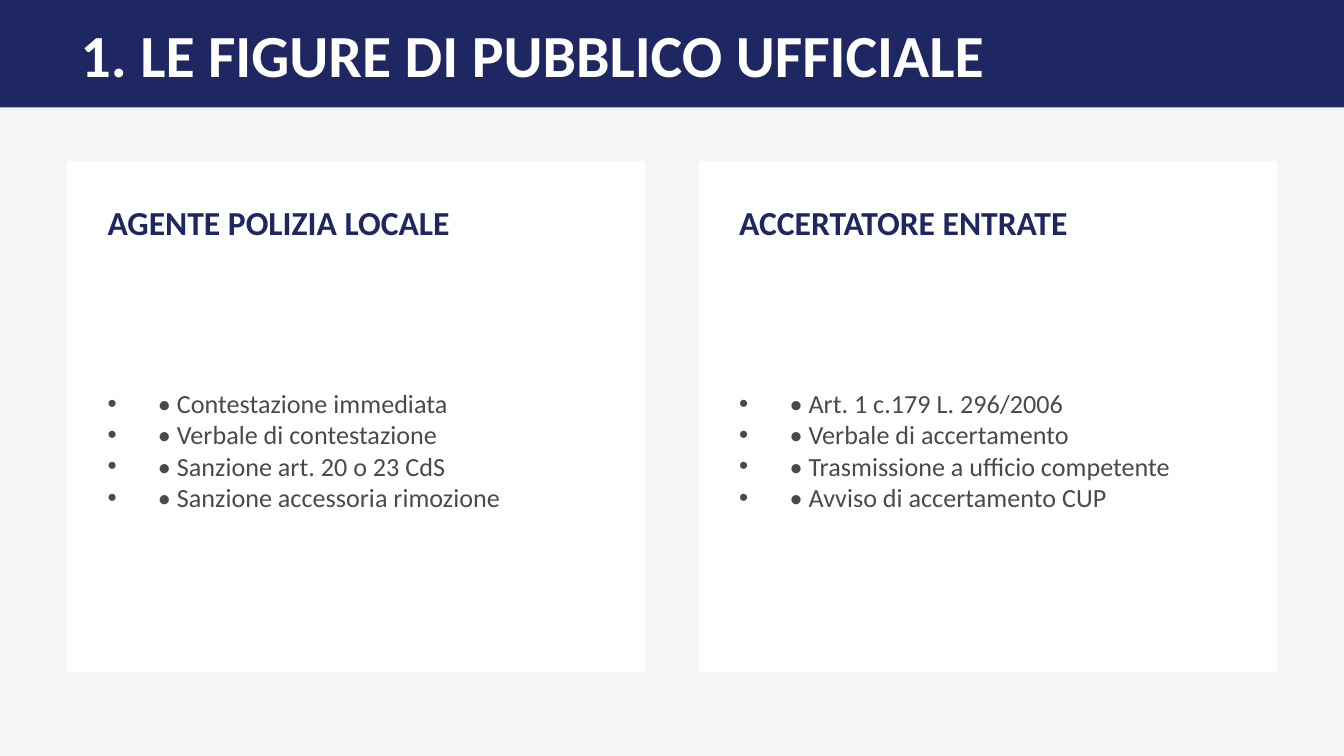
import pptx
import pptx.util
import pptx.dml.color
import pptx.enum.shapes
import pptx.enum.text
import pptx.oxml
import pptx.oxml.ns
from pptx.util import Inches

NAVY = pptx.dml.color.RGBColor(0x1E, 0x27, 0x61)
WHITE = pptx.dml.color.RGBColor(0xFF, 0xFF, 0xFF)
PALE = pptx.dml.color.RGBColor(0xF5, 0xF5, 0xF5)
GRAY = pptx.dml.color.RGBColor(0x4A, 0x4A, 0x4A)

TITLE_FORMAT = {"size": pptx.util.Pt(32), "bold": True, "name": "Calibri"}
HEADING_FORMAT = {"size": pptx.util.Pt(18), "bold": True, "name": "Calibri"}
LIST_FORMAT = {"size": pptx.util.Pt(14), "bold": False, "name": "Calibri"}
LIST_INDENT = Inches(3 / 8)

COLUMNS = [
    ("AGENTE POLIZIA LOCALE", [
        "• Contestazione immediata",
        "• Verbale di contestazione",
        "• Sanzione art. 20 o 23 CdS",
        "• Sanzione accessoria rimozione",
    ]),
    ("ACCERTATORE ENTRATE", [
        "• Art. 1 c.179 L. 296/2006",
        "• Verbale di accertamento",
        "• Trasmissione a ufficio competente",
        "• Avviso di accertamento CUP",
    ]),
]


def add_panel(page, order, left, top, width, height, color):
    """Add a plain rectangle behind the text, at the given stacking order."""
    panel = page.shapes.add_shape(
        pptx.enum.shapes.MSO_SHAPE.RECTANGLE,
        Inches(left), Inches(top), Inches(width), Inches(height))
    panel.shadow.inherit = False
    panel.fill.solid()
    panel.fill.fore_color.rgb = color
    panel.line.fill.background()
    page.shapes._spTree.insert(2 + order, panel._element)


def fill_box(box, left, top, width, height, lines, style, color, bullets=False):
    """Place a placeholder and write its lines in one style."""
    box.left, box.top = Inches(left), Inches(top)
    box.width, box.height = Inches(width), Inches(height)
    frame = box.text_frame
    frame.text = "\n".join(lines)
    frame.word_wrap = True
    frame.auto_size = pptx.enum.text.MSO_AUTO_SIZE.NONE
    frame.vertical_anchor = pptx.enum.text.MSO_ANCHOR.MIDDLE
    for para in frame.paragraphs:
        if bullets:
            props = para._p.get_or_add_pPr()
            props.set("marL", str(LIST_INDENT))
            props.set("indent", str(-LIST_INDENT))
            bullet = pptx.oxml.parse_xml(
                f'<a:buChar {pptx.oxml.ns.nsdecls("a")} char="•"/>')
            props.append(bullet)
        para.alignment = pptx.enum.text.PP_ALIGN.LEFT
        para.space_before = pptx.util.Pt(0)
        for span in para.runs:
            for name, value in style.items():
                setattr(span.font, name, value)
            span.font.color.rgb = color


# Widescreen deck, 16:9
deck = pptx.Presentation()
deck.slide_width, deck.slide_height = Inches(10), Inches(10 * 9 / 16)

# Comparison layout: a title and two pairs of heading and list
page = deck.slides.add_slide(deck.slide_layouts.get_by_name("Comparison"))
page.background.fill.solid()
page.background.fill.fore_color.rgb = PALE

# Title band
add_panel(page, 0, 0, 0, 10, 0.8, NAVY)
fill_box(page.shapes.title, 0.5, 0.15, 9, 0.5,
         ["1. LE FIGURE DI PUBBLICO UFFICIALE"], TITLE_FORMAT, WHITE)

# Two cards, each with a heading and a list
boxes = {box.placeholder_format.idx: box for box in page.placeholders}
for column, (heading, items) in enumerate(COLUMNS):
    left = 0.5 + 4.7 * column
    add_panel(page, 1 + column, left, 1.2, 4.3, 3.8, WHITE)
    fill_box(boxes[1 + 2 * column], left + 0.2, 1.4, 3.9, 0.5,
             [heading], HEADING_FORMAT, NAVY)
    fill_box(boxes[2 + 2 * column], left + 0.2, 2.1, 3.9, 2.5,
             items, LIST_FORMAT, GRAY, bullets=True)

deck.save("out.pptx")
